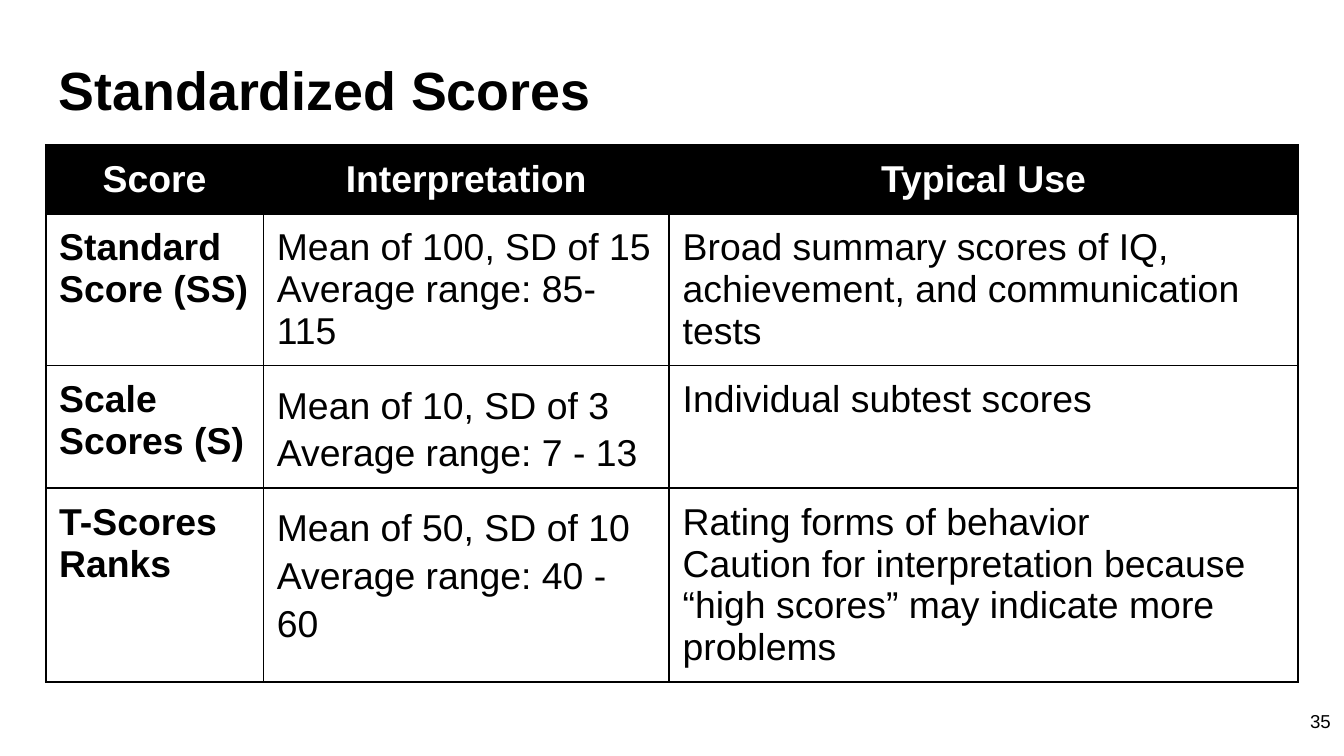
from lxml import etree
from pptx import Presentation
from pptx.dml.color import RGBColor
from pptx.enum.text import MSO_ANCHOR, PP_ALIGN
from pptx.oxml.ns import qn
from pptx.util import Inches, Pt

BLACK = RGBColor(0, 0, 0)
WHITE = RGBColor(255, 255, 255)
LEFT, CENTER, RIGHT = PP_ALIGN.LEFT, PP_ALIGN.CENTER, PP_ALIGN.RIGHT
TOP = MSO_ANCHOR.TOP
FONT = "Arial"
INSET = Inches(0.1)
COLUMN_WIDTHS = (1.62, 3.02, 4.68)
ROW_HEIGHTS = (0.43, 0.63, 0.63, 0.84)
SCORE_ROWS = (
    ("Score", "Interpretation", "Typical Use"),
    (
        "Standard Score (SS)",
        "Mean of 100, SD of 15\nAverage range: 85-115",
        "Broad summary scores of IQ, achievement, and communication tests",
    ),
    (
        "Scale Scores (S)",
        "Mean of 10, SD of 3\nAverage range: 7 - 13",
        "Individual subtest scores",
    ),
    (
        "T-Scores Ranks",
        "Mean of 50, SD of 10\nAverage range: 40 - 60",
        "Rating forms of behavior\n"
        "Caution for interpretation because “high scores” may indicate more problems",
    ),
)


def write_text(text_frame, text, size, color=BLACK, bold=False, alignment=LEFT, spacing=None):
    text_frame.text = text
    text_frame.word_wrap = True
    for paragraph in text_frame.paragraphs:
        paragraph.alignment = alignment
        if spacing:
            paragraph.line_spacing = spacing
        for run in paragraph.runs:
            run.font.name = FONT
            run.font.size = Pt(size)
            run.font.bold = bold
            run.font.color.rgb = color


def add_text(slide, left, top, width, height, text, size, **style):
    shape = slide.shapes.add_textbox(Inches(left), Inches(top), Inches(width), Inches(height))
    text_frame = shape.text_frame
    text_frame.vertical_anchor = TOP
    write_text(text_frame, text, size, **style)
    return text_frame


def add_borders(cell, color):
    properties = cell._tc.get_or_add_tcPr()
    for index, side in enumerate(("lnL", "lnR", "lnT", "lnB")):
        line = etree.Element(qn(f"a:{side}"), w=str(Pt(1)))
        fill = etree.SubElement(line, qn("a:solidFill"))
        etree.SubElement(fill, qn("a:srgbClr"), val=str(color))
        properties.insert(index, line)


def fill_cell(cell, text, row, column):
    is_header = row == 0
    cell.margin_left = cell.margin_right = INSET
    cell.margin_top = cell.margin_bottom = INSET
    cell.vertical_anchor = TOP
    cell.fill.solid()
    cell.fill.fore_color.rgb = BLACK if is_header else WHITE
    write_text(
        cell.text_frame,
        text,
        20,
        color=WHITE if is_header else BLACK,
        bold=is_header or column == 0,
        alignment=CENTER if is_header else LEFT,
        spacing=1.15 if row > 1 and column == 1 else None,
    )
    add_borders(cell, BLACK)


def add_score_table(slide):
    table = slide.shapes.add_table(
        len(ROW_HEIGHTS), len(COLUMN_WIDTHS), Inches(0.34), Inches(1.08),
        Inches(sum(COLUMN_WIDTHS)), Inches(sum(ROW_HEIGHTS)),
    ).table
    for column, width in zip(table.columns, COLUMN_WIDTHS):
        column.width = Inches(width)
    for row, height in zip(table.rows, ROW_HEIGHTS):
        row.height = Inches(height)
    for row, texts in enumerate(SCORE_ROWS):
        for column, text in enumerate(texts):
            fill_cell(table.cell(row, column), text, row, column)


def main():
    presentation = Presentation()
    presentation.slide_width = Inches(10)
    presentation.slide_height = presentation.slide_width * 9 // 16
    slide = presentation.slides.add_slide(presentation.slide_layouts[6])

    add_score_table(slide)
    title = add_text(slide, 0.34, 0.32, 9.32, 0.63, "Standardized Scores", 28.8, bold=True)
    title.margin_left = title.margin_right = INSET
    title.margin_top = title.margin_bottom = INSET
    add_text(slide, 9.53, 5.23, 0.47, 0.4, "35", 10, alignment=RIGHT)

    presentation.save("out.pptx")


if __name__ == "__main__":
    main()
